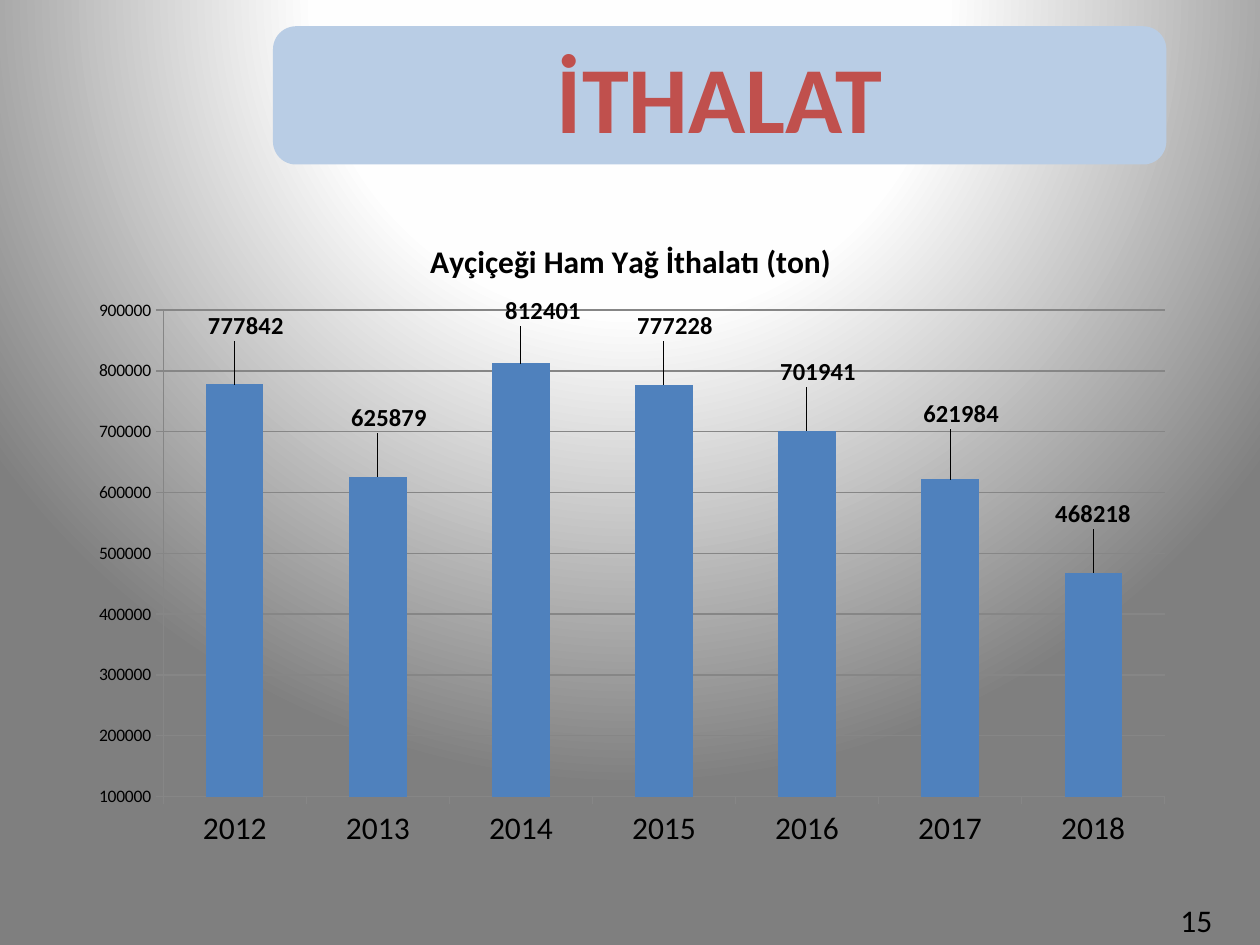
import dataclasses
import typing

import lxml.etree
import pptx
import pptx.chart.data
import pptx.dml.color
import pptx.enum.chart
import pptx.enum.shapes
import pptx.enum.text
import pptx.oxml.ns
import pptx.util

Pt = pptx.util.Pt
qn = pptx.oxml.ns.qn


@dataclasses.dataclass(frozen=True)
class Theme:
    face: str = "Calibri"
    ink: str = "000000"
    band: str = "B9CDE5"
    head: str = "C0504D"
    bar: str = "4F81BD"
    line: str = "868686"
    fade: tuple = ((0, "FFFFFF"), (40, "FEFEFE"), (100, "7F7F7F"))
    huge: int = 54
    large: int = 18
    label: int = 14
    small: int = 10


class Box(typing.NamedTuple):
    left: float
    top: float
    width: float
    height: float

    def points(self) -> tuple:
        return tuple(Pt(side) for side in self)


class Year(typing.NamedTuple):
    name: str
    tons: int
    shift: float
    lift: float


THEME = Theme()
YEARS = (
    Year("2012", 777842, 0.01, -0.06),
    Year("2013", 625879, 0.01, -0.06),
    Year("2014", 812401, 0.02, -0.05),
    Year("2015", 777228, 0.01, -0.06),
    Year("2016", 701941, 0.01, -0.06),
    Year("2017", 621984, 0.01, -0.07),
    Year("2018", 468218, 0, -0.06),
)
PLOT = Box(0.08, 0.15, 0.9, 0.76)


def tint(code: str) -> pptx.dml.color.RGBColor:
    return pptx.dml.color.RGBColor.from_string(code)


def style(font, size: float, color: str = THEME.ink, bold: bool = False) -> None:
    font.name = THEME.face
    font.size = Pt(size)
    font.bold = bold
    font.color.rgb = tint(color)


def child(parent, tag: str, **attrs: str):
    return lxml.etree.SubElement(parent, qn(tag), attrs)


def paint_back(slide) -> None:
    slide.background.fill.gradient()
    grad = next(slide.element.iter(qn("a:gradFill")))
    for part in list(grad):
        grad.remove(part)
    stops = child(grad, "a:gsLst")
    for place, color in THEME.fade:
        stop = child(stops, "a:gs", pos=str(place * 1000))
        child(stop, "a:srgbClr", val=color)
    route = child(grad, "a:path", path="circle")
    child(route, "a:fillToRect", l="50000", t="-80000", r="50000", b="180000")


def add_head(slide, box: Box, text: str) -> None:
    kind = pptx.enum.shapes.MSO_SHAPE.ROUNDED_RECTANGLE
    shape = slide.shapes.add_shape(kind, *box.points())
    shape.shadow.inherit = False
    shape.fill.solid()
    shape.fill.fore_color.rgb = tint(THEME.band)
    shape.line.fill.background()
    frame = shape.text_frame
    frame.vertical_anchor = pptx.enum.text.MSO_ANCHOR.MIDDLE
    line = frame.paragraphs[0]
    line.text = text
    line.alignment = pptx.enum.text.PP_ALIGN.CENTER
    style(line.font, THEME.huge, THEME.head, True)


def add_note(slide, box: Box, text: str) -> None:
    frame = slide.shapes.add_textbox(*box.points()).text_frame
    frame.word_wrap = True
    frame.auto_size = pptx.enum.text.MSO_AUTO_SIZE.SHAPE_TO_FIT_TEXT
    line = frame.paragraphs[0]
    line.text = text
    style(line.font, THEME.large)


def place(parent, spot: int, **sides: typing.Any) -> None:
    for old in parent.findall(qn("c:layout")):
        parent.remove(old)
    layout = parent.makeelement(qn("c:layout"), {})
    parent.insert(spot, layout)
    manual = child(layout, "c:manualLayout")
    for name, value in sides.items():
        child(manual, f"c:{name}", val=str(value))


def add_bars(slide, box: Box, title: str) -> None:
    data = pptx.chart.data.CategoryChartData()
    data.categories = [year.name for year in YEARS]
    data.add_series("Series 1", [year.tons for year in YEARS])
    kind = pptx.enum.chart.XL_CHART_TYPE.COLUMN_CLUSTERED
    chart = slide.shapes.add_chart(kind, *box.points(), data).chart
    style(chart.font, THEME.small)
    chart.has_legend = False
    chart.has_title = True
    line = chart.chart_title.text_frame.paragraphs[0]
    line.text = title
    style(line.font, THEME.large, bold=True)

    years, tons = chart.category_axis, chart.value_axis
    for axis, size in ((years, THEME.large), (tons, THEME.small)):
        axis.major_tick_mark = pptx.enum.chart.XL_TICK_MARK.OUTSIDE
        axis.format.line.color.rgb = tint(THEME.line)
        axis.format.line.width = Pt(0.75)
        style(axis.tick_labels.font, size)
    tons.minimum_scale, tons.maximum_scale = 100000, 900000
    tons.major_unit = 100000
    tons.has_major_gridlines = True
    grid = tons.major_gridlines.format.line
    grid.color.rgb = tint(THEME.line)
    grid.width = Pt(0.75)

    plot = chart.plots[0]
    plot.gap_width = 150
    plot.vary_by_categories = False
    bars = plot.series[0]
    bars.format.fill.solid()
    bars.format.fill.fore_color.rgb = tint(THEME.bar)
    bars.data_labels.show_value = True
    for index, year in enumerate(YEARS):
        label = bars.points[index].data_label
        style(label.font, THEME.label, bold=True)
        label.position = pptx.enum.chart.XL_LABEL_POSITION.OUTSIDE_END
    style(bars.data_labels.font, THEME.label, bold=True)
    tags = chart.element.iter(qn("c:dLbl"))
    for tag, year in zip(list(tags), YEARS):
        place(tag, 1, x=year.shift, y=year.lift)
    area = next(chart.element.iter(qn("c:plotArea")))
    place(area, 0, layoutTarget="inner", xMode="edge", yMode="edge",
          x=PLOT.left, y=PLOT.top, w=PLOT.width, h=PLOT.height)


def main() -> None:
    deck = pptx.Presentation()
    deck.slide_width, deck.slide_height = Pt(720), Pt(540)
    slide = deck.slides.add_slide(deck.slide_layouts[6])
    paint_back(slide)
    add_head(slide, Box(156, 15, 510.5, 79), "İTHALAT")
    add_bars(slide, Box(42.5, 122.4, 635.8, 365.8), "Ayçiçeği Ham Yağ İthalatı (ton)")
    add_note(slide, Box(667.4, 511.2, 36.7, 29), "15")
    deck.save("out.pptx")


if __name__ == "__main__":
    main()
